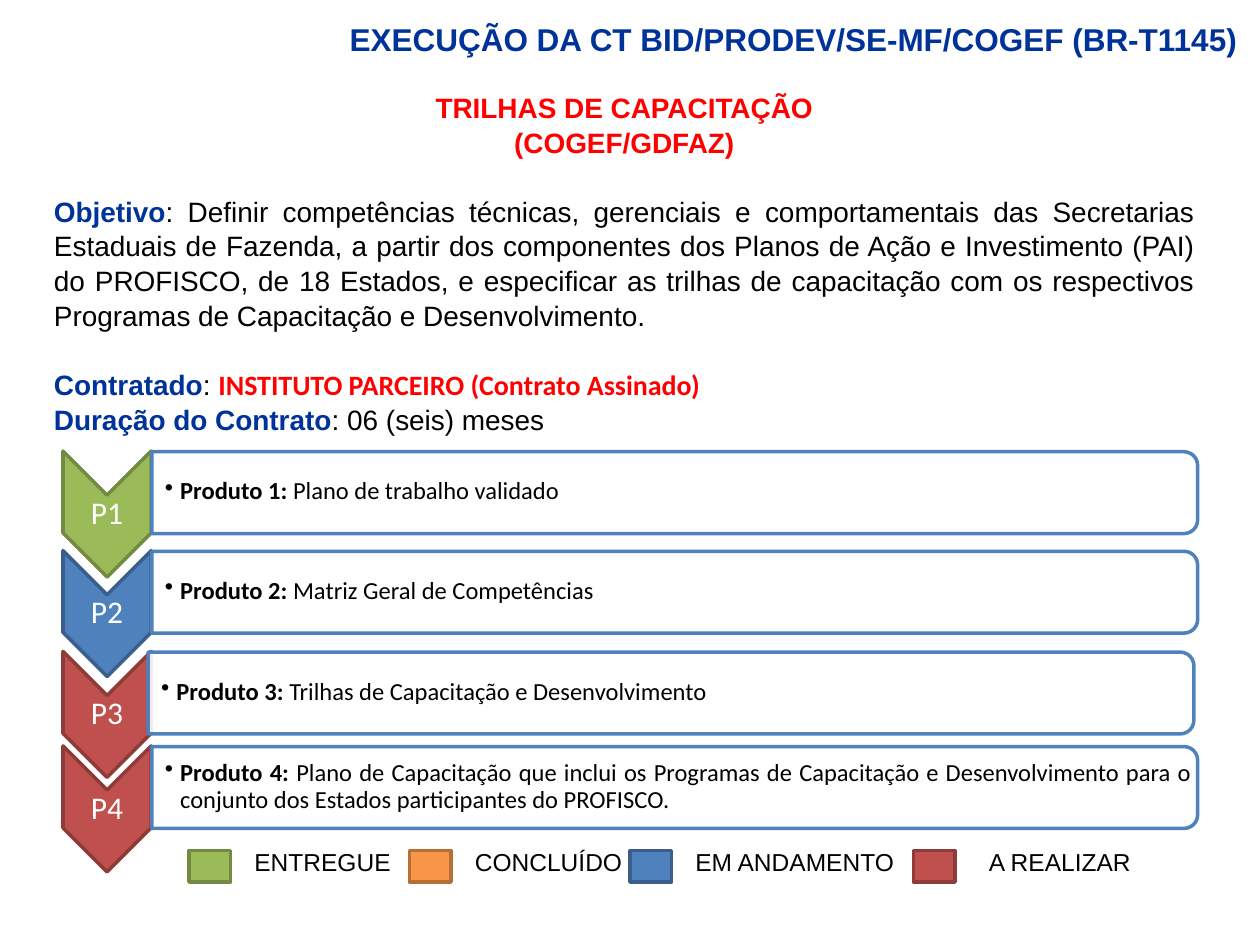
from dataclasses import dataclass

from lxml import etree
from pptx import Presentation
from pptx.dml.color import RGBColor
from pptx.enum.shapes import MSO_SHAPE
from pptx.enum.text import MSO_ANCHOR, PP_ALIGN
from pptx.oxml.ns import qn
from pptx.util import Inches, Pt

LEFT, MID, RIGHT, FULL = PP_ALIGN.LEFT, PP_ALIGN.CENTER, PP_ALIGN.RIGHT, PP_ALIGN.JUSTIFY
TOP, CENTER = MSO_ANCHOR.TOP, MSO_ANCHOR.MIDDLE
ARROW, CARD, RECT = MSO_SHAPE.CHEVRON, MSO_SHAPE.ROUND_2_SAME_RECTANGLE, MSO_SHAPE.RECTANGLE

NAVY = RGBColor(0x00, 0x33, 0x99)
RED = RGBColor(0xFF, 0x00, 0x00)
BLACK = RGBColor(0x00, 0x00, 0x00)
WHITE = RGBColor(0xFF, 0xFF, 0xFF)
BLUE = RGBColor(0x4F, 0x81, 0xBD)


@dataclass(frozen=True)
class Tone:
    fill: RGBColor
    line: RGBColor


@dataclass(frozen=True)
class Run:
    text: str
    color: RGBColor = BLACK
    bold: bool = False
    font: str = "Arial"


@dataclass(frozen=True)
class Para:
    runs: list[Run]
    align: PP_ALIGN = LEFT
    before: float = 0


@dataclass(frozen=True)
class Step:
    top: float
    tone: Tone
    text: str
    align: PP_ALIGN = LEFT
    shift: float = 0


@dataclass(frozen=True)
class Key:
    left: float
    tone: Tone
    text: str
    gap: float = 0.42


GREEN = Tone(RGBColor(0x9B, 0xBB, 0x59), RGBColor(0x73, 0x8A, 0x42))
ORANGE = Tone(RGBColor(0xF7, 0x96, 0x46), RGBColor(0xB7, 0x6F, 0x34))
AZURE = Tone(BLUE, RGBColor(0x3A, 0x5F, 0x8C))
BRICK = Tone(RGBColor(0xC0, 0x50, 0x4D), RGBColor(0x8E, 0x3B, 0x39))
PAPER = Tone(WHITE, BLUE)

BODY = [
    Para([Run("TRILHAS DE CAPACITAÇÃO", RED, True)], MID),
    Para([Run("(COGEF/GDFAZ)", RED, True)], MID),
    Para([
        Run("Objetivo", NAVY, True),
        Run(": Definir competências técnicas, gerenciais e comportamentais das "
            "Secretarias Estaduais de Fazenda, a partir dos componentes dos Planos "
            "de Ação e Investimento (PAI) do PROFISCO, de 18 Estados, e especificar "
            "as trilhas de capacitação com os respectivos Programas de Capacitação "
            "e Desenvolvimento."),
    ], FULL, 19.2),
    Para([
        Run("Contratado", NAVY, True),
        Run(": "),
        Run("INSTITUTO PARCEIRO (Contrato Assinado)", RED, True, "Calibri"),
    ], FULL, 19.2),
    Para([Run("Duração do Contrato", NAVY, True), Run(": 06 (seis) meses")], FULL),
]

STEPS = [
    Step(3.58, GREEN, "Plano de trabalho validado"),
    Step(4.37, AZURE, "Matriz Geral de Competências"),
    Step(5.17, BRICK, "Trilhas de Capacitação e Desenvolvimento", shift=-0.03),
    Step(5.92, BRICK, "Plano de Capacitação que inclui os Programas de Capacitação e "
         "Desenvolvimento para o conjunto dos Estados participantes do PROFISCO.", FULL),
]

KEYS = [
    Key(1.5, GREEN, "ENTREGUE"),
    Key(3.25, ORANGE, "CONCLUÍDO"),
    Key(5, AZURE, "EM ANDAMENTO"),
    Key(7.25, BRICK, "A REALIZAR", 0.5),
]


def write(slide, paras: list[Para], left: float, top: float, width: float, height: float, *,
          size: float, anchor: MSO_ANCHOR = TOP, space: float = 1.0, bullet: bool = False,
          inset: tuple[float, float, float, float] = (0.1, 0.05, 0.1, 0.05)) -> None:
    box = slide.shapes.add_textbox(Inches(left), Inches(top), Inches(width), Inches(height))
    frame = box.text_frame
    frame.word_wrap = True
    frame.vertical_anchor = anchor
    frame.margin_left, frame.margin_top, frame.margin_right, frame.margin_bottom = map(Inches, inset)
    for i, para in enumerate(paras):
        line = frame.add_paragraph() if i else frame.paragraphs[0]
        line.alignment = para.align
        line.line_spacing = space
        if para.before:
            line.space_before = Pt(para.before)
        if bullet:
            props = line._p.get_or_add_pPr()
            props.set("marL", str(Inches(0.12)))
            props.set("indent", str(-Inches(0.12)))
            etree.SubElement(props, qn("a:buChar")).set("char", "•")
        for part in para.runs:
            run = line.add_run()
            run.text = part.text
            run.font.name = part.font
            run.font.size = Pt(size)
            run.font.bold = part.bold
            run.font.color.rgb = part.color


def draw(slide, kind: MSO_SHAPE, tone: Tone, left: float, top: float,
         width: float, height: float, turn: float = 0):
    shape = slide.shapes.add_shape(kind, Inches(left), Inches(top), Inches(width), Inches(height))
    shape.rotation = turn
    shape.shadow.inherit = False
    shape.fill.solid()
    shape.fill.fore_color.rgb = tone.fill
    shape.line.color.rgb = tone.line
    shape.line.width = Pt(2)
    return shape


def add_step(slide, num: int, step: Step) -> None:
    tight = (0.01, 0.01, 0.01, 0.01)
    draw(slide, ARROW, step.tone, 0.35, step.top + 0.15, 1, 0.7, 90)
    write(slide, [Para([Run(f"P{num}", WHITE, font="Calibri")], MID)],
          0.5, step.top + 0.35, 0.7, 0.3, size=18, anchor=CENTER, space=0.9, inset=tight)
    card = draw(slide, CARD, PAPER, 5.03 + step.shift, step.top - 3.82, 0.65, 8.3, 90)
    tint = card._element.spPr.find(qn("a:solidFill"))[0]
    etree.SubElement(tint, qn("a:alpha")).set("val", "90000")
    runs = [Run(f"Produto {num}: ", bold=True, font="Calibri"), Run(step.text, font="Calibri")]
    write(slide, [Para(runs, step.align)], 1.2 + step.shift, step.top + 0.03, 8.27, 0.59,
          size=14, anchor=CENTER, space=0.9, bullet=True, inset=(0.11, 0.01, 0.01, 0.01))


def add_key(slide, key: Key) -> None:
    draw(slide, RECT, key.tone, key.left, 6.75, 0.33, 0.25)
    write(slide, [Para([Run(key.text)])], key.left + key.gap, 6.67, 1.92, 0.34, size=14)


def main() -> None:
    deck = Presentation()
    deck.slide_width, deck.slide_height = Inches(10), Inches(7.5)
    slide = deck.slides.add_slide(deck.slide_layouts[6])
    title = Run("EXECUÇÃO DA CT BID/PRODEV/SE-MF/COGEF (BR-T1145)", NAVY, True)
    write(slide, [Para([title], RIGHT)], 2.42, 0.11, 7.5, 0.4, size=18)
    write(slide, BODY, 0.33, 0.66, 9.25, 3.06, size=16, space=1.04)
    for num, step in enumerate(STEPS, 1):
        add_step(slide, num, step)
    for key in KEYS:
        add_key(slide, key)
    deck.save("out.pptx")


if __name__ == "__main__":
    main()
